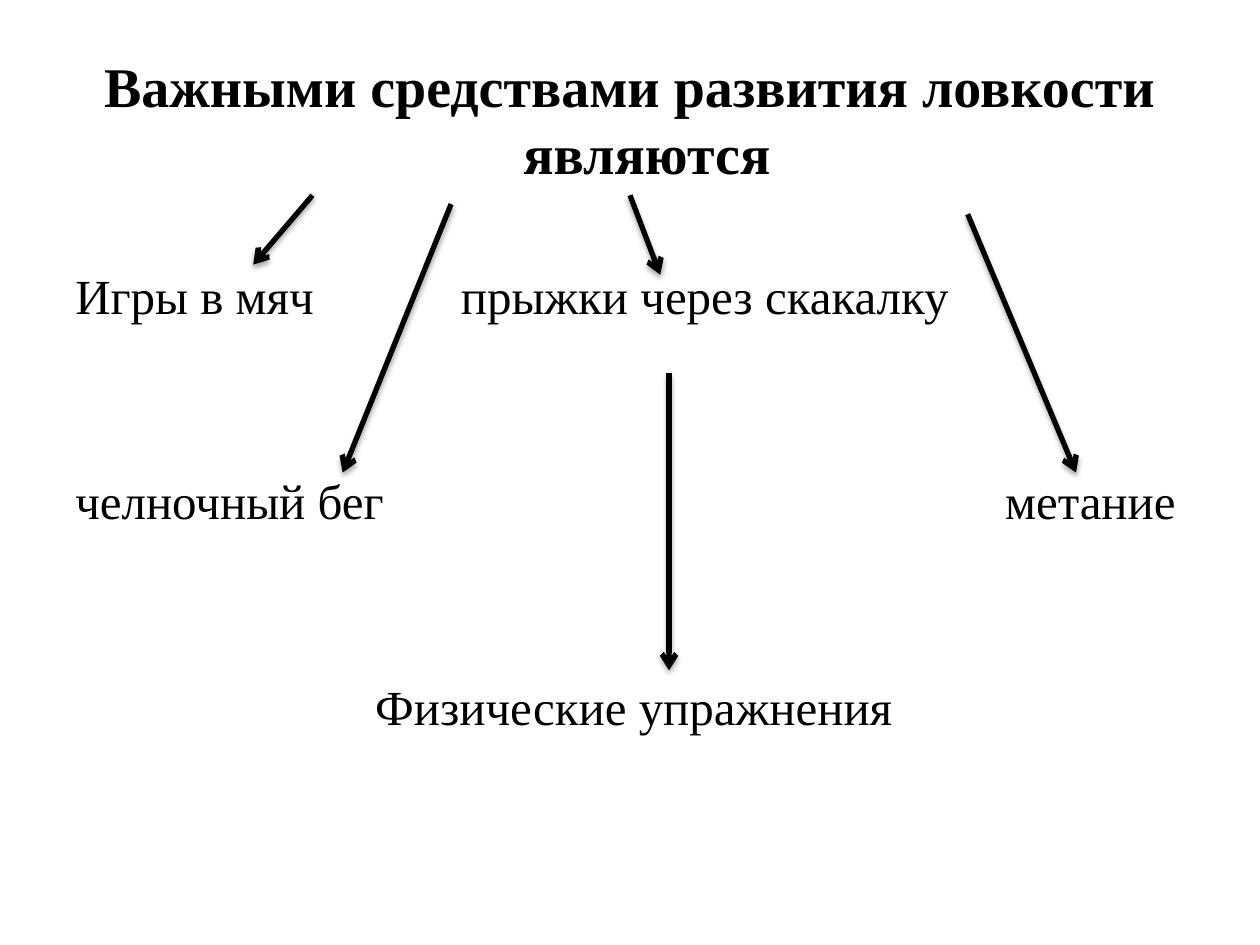
from dataclasses import dataclass

from pptx import Presentation
from pptx.dml.color import RGBColor
from pptx.enum.shapes import MSO_CONNECTOR
from pptx.enum.text import PP_ALIGN as Align
from pptx.oxml import parse_xml
from pptx.oxml.ns import nsdecls
from pptx.oxml.xmlchemy import OxmlElement
from pptx.util import Inches, Pt


@dataclass(frozen=True)
class Theme:
    """Colours, font and sizes of the slide."""
    ink: RGBColor = RGBColor(0, 0, 0)
    font: str = "Times New Roman"
    title_size: Pt = Pt(32)
    item_size: Pt = Pt(28)
    arrow_width: Pt = Pt(3)


THEME = Theme()
TITLE = "Важными средствами развития ловкости являются "
ROWS = [
    ("Игры в мяч\tпрыжки через скакалку", 45.2, 3.06, -3.06),
    ("челночный бег\tметание", 84, 7.38, -7.38),
    ("Физические упражнения", 84, 2.38, 0),
]
ARROWS = [
    ((2.48, 1.55), (2.01, 2.1)),
    ((5, 1.55), (5.24, 2.18)),
    ((3.58, 1.62), (2.72, 3.75)),
    ((7.68, 1.7), (8.54, 3.75)),
    ((5.31, 2.96), (5.31, 5.32)),
]
SHADOW = (
    f'<a:effectLst {nsdecls("a")}><a:outerShdw blurRad="{Pt(3.1)}" dist="{Pt(1.8)}" '
    'dir="5400000" rotWithShape="0"><a:srgbClr val="000000"><a:alpha val="35000"/>'
    "</a:srgbClr></a:outerShdw></a:effectLst>"
)


def write_paragraph(paragraph, text, size, bold, alignment, gap, margin, indent):
    """Write one indented paragraph in the theme's font."""
    paragraph.text = text
    paragraph.alignment = alignment
    paragraph.space_before = Pt(gap)
    properties = paragraph._p.get_or_add_pPr()
    properties.set("marL", str(Inches(margin)))
    properties.set("indent", str(Inches(indent)))
    font = paragraph.runs[0].font
    for name, value in {"name": THEME.font, "size": size, "bold": bold}.items():
        setattr(font, name, value)
    font.color.rgb = THEME.ink


def add_means(slide, left, top, width, height):
    """Place the heading and the rows of exercises in the given box."""
    frame = slide.shapes.add_textbox(left, top, width, height).text_frame
    frame.word_wrap = True
    write_paragraph(frame.paragraphs[0], TITLE, THEME.title_size, True,
                    Align.CENTER, 3.4, 0.38, -0.38)
    for text, gap, margin, indent in ROWS:
        write_paragraph(frame.add_paragraph(), text, THEME.item_size, False,
                        Align.JUSTIFY, gap, margin, indent)


def add_arrow(slide, start, end):
    """Draw a shadowed arrow between two points given in inches."""
    points = [Inches(value) for value in start + end]
    arrow = slide.shapes.add_connector(MSO_CONNECTOR.STRAIGHT, *points)
    arrow.line.color.rgb = THEME.ink
    arrow.line.width = THEME.arrow_width
    head = OxmlElement("a:tailEnd")
    head.set("type", "arrow")
    arrow.line._get_or_add_ln().append(head)
    arrow._element.spPr.append(parse_xml(SHADOW))


def main():
    """Build and save the slide."""
    deck = Presentation()
    deck.slide_width, deck.slide_height = Inches(10), Inches(7.5)
    slide = deck.slides.add_slide(deck.slide_layouts[6])
    add_means(slide, Inches(0.5), Inches(0.36), Inches(9), Inches(6.34))
    for start, end in ARROWS:
        add_arrow(slide, start, end)
    deck.save("out.pptx")


if __name__ == "__main__":
    main()
